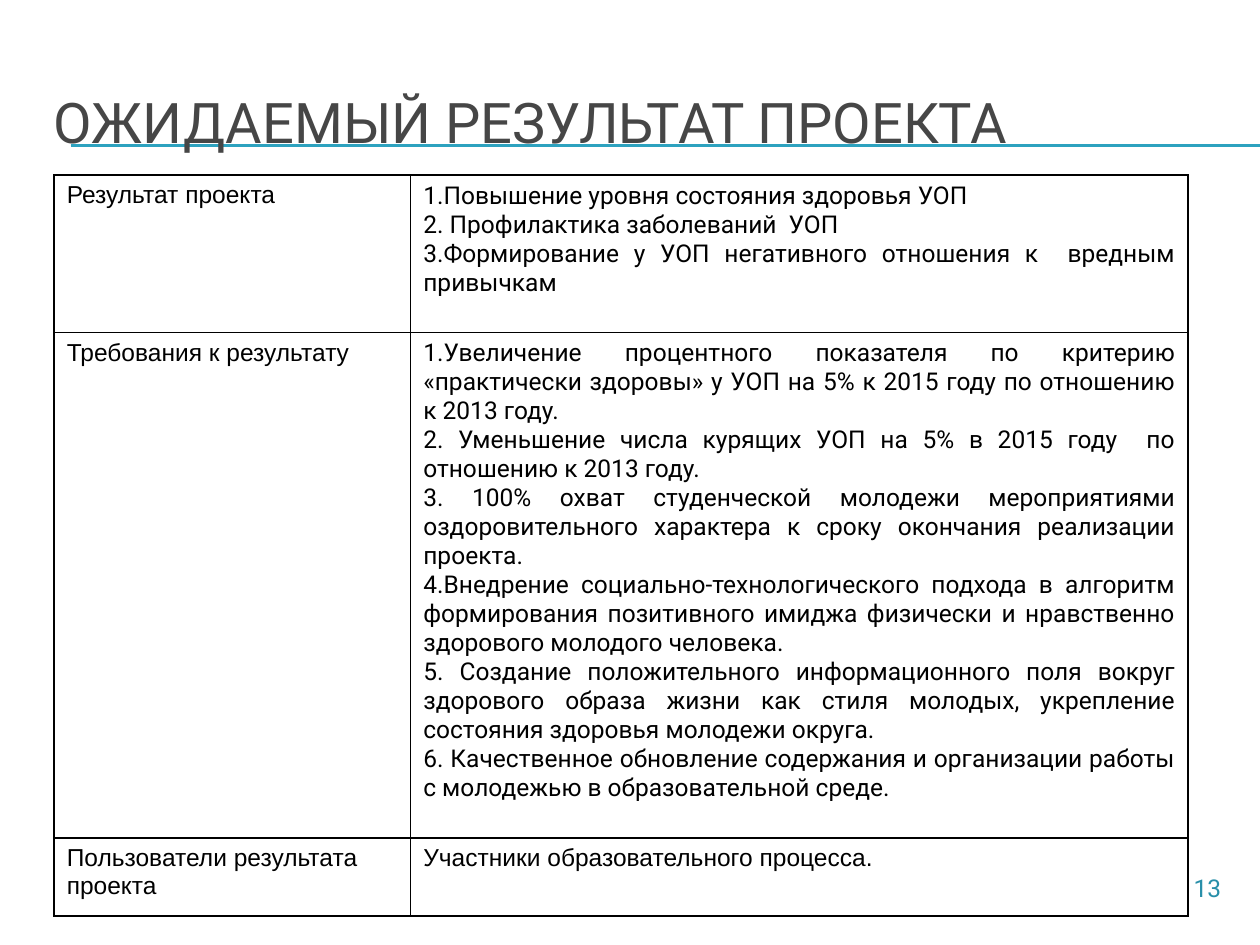
import lxml.etree
import pptx
import pptx.dml.color
import pptx.enum.shapes
import pptx.enum.text
import pptx.oxml
import pptx.oxml.ns
import pptx.util

Inches = pptx.util.Inches
Align = pptx.enum.text.PP_ALIGN
Anchor = pptx.enum.text.MSO_ANCHOR
COLORS = {"rule": "2DA2BF", "title": "464646", "text": "000000", "number": "288FA9"}
COLUMN_WIDTHS = [2.83, 6.17]
ROWS = [
    (1.25, "Результат проекта", [
        "Повышение уровня состояния здоровья УОП",
        " Профилактика заболеваний  УОП",
        "Формирование у УОП негативного отношения к  вредным привычкам",
    ]),
    (4.01, "Требования к результату", [
        "Увеличение процентного показателя по критерию «практически здоровы» "
        "у УОП на 5% к 2015 году по отношению к 2013 году.",
        " Уменьшение числа курящих УОП на 5% в 2015 году  по отношению к 2013 году.",
        " 100% охват студенческой молодежи мероприятиями оздоровительного "
        "характера к сроку окончания реализации проекта.",
        "Внедрение социально-технологического подхода в алгоритм формирования "
        "позитивного имиджа физически и нравственно здорового молодого человека.",
        " Создание положительного информационного поля вокруг здорового образа "
        "жизни как стиля молодых, укрепление состояния здоровья молодежи округа.",
        " Качественное обновление содержания и организации работы с молодежью "
        "в образовательной среде.",
    ]),
    (0.62, "Пользователи результата проекта", "Участники образовательного процесса."),
]


def rgb(name):
    """Return the named colour."""
    return pptx.dml.color.RGBColor.from_string(COLORS[name])


def add_span(para, text, size, font, color):
    """Add one styled run to a paragraph."""
    span = para.add_run()
    span.text = text
    span.font.size = pptx.util.Pt(size)
    span.font.name = font
    span.font.color.rgb = rgb(color)


def add_text(page, box, text, size, color, align, anchor):
    """Add a one-line text box."""
    frame = page.shapes.add_textbox(*map(Inches, box)).text_frame
    frame.word_wrap = True
    frame.vertical_anchor = anchor
    para = frame.paragraphs[0]
    para.alignment = align
    add_span(para, text, size, "Roboto", color)


def add_rules(page, left, top, right):
    """Draw the double rule under the title."""
    for y in (top, top + 0.01):
        rule = page.shapes.add_connector(
            pptx.enum.shapes.MSO_CONNECTOR.STRAIGHT,
            Inches(left), Inches(y), Inches(right), Inches(y))
        rule.line.color.rgb = rgb("rule")
        rule.line.width = pptx.util.Pt(0.75)
        properties = rule._element.spPr
        lxml.etree.SubElement(properties, pptx.oxml.ns.qn("a:effectLst"))


def style_cell(cell):
    """Give a cell its borders, margins and empty fill."""
    cell.margin_left = cell.margin_right = Inches(0.1)
    cell.margin_top = cell.margin_bottom = Inches(0.05)
    properties = cell._tc.get_or_add_tcPr()
    for side in ("lnL", "lnR", "lnT", "lnB"):
        properties.append(pptx.oxml.parse_xml(
            f'<a:{side} {pptx.oxml.ns.nsdecls("a")} w="{pptx.util.Pt(1)}"><a:solidFill>'
            f'<a:srgbClr val="{COLORS["text"]}"/></a:solidFill></a:{side}>'))
    cell.fill.background()


def fill_numbered(cell, items):
    """Write items as a justified numbered list."""
    frame = cell.text_frame
    for index, item in enumerate(items):
        para = frame.add_paragraph() if index else frame.paragraphs[0]
        para.alignment = Align.JUSTIFY
        properties = para._p.get_or_add_pPr()
        properties.set("marL", "0")
        properties.set("indent", "0")
        numbering = lxml.etree.SubElement(properties, pptx.oxml.ns.qn("a:buAutoNum"))
        numbering.set("type", "arabicPeriod")
        add_span(para, item, 14, "Roboto", "text")


def add_results(page, left, top):
    """Build the table of project results."""
    heights = [height for height, label, content in ROWS]
    table = page.shapes.add_table(
        len(ROWS), len(COLUMN_WIDTHS), Inches(left), Inches(top),
        Inches(sum(COLUMN_WIDTHS)), Inches(sum(heights))).table
    table.first_row = table.horz_banding = False
    for column, width in zip(table.columns, COLUMN_WIDTHS):
        column.width = Inches(width)
    for row, (height, label, content) in zip(table.rows, ROWS):
        row.height = Inches(height)
        for cell, value in zip(row.cells, (label, content)):
            style_cell(cell)
            if isinstance(value, list):
                fill_numbered(cell, value)
            else:
                add_span(cell.text_frame.paragraphs[0], value, 14, "Arial", "text")


def main():
    """Build and save the slide."""
    deck = pptx.Presentation()
    deck.slide_width, deck.slide_height = Inches(10), Inches(7.5)
    page = deck.slides.add_slide(deck.slide_layouts[6])
    add_rules(page, 0.56, 1.15, 10)
    add_text(page, (0.33, 0.5, 9.5, 0.92), "ОЖИДАЕМЫЙ РЕЗУЛЬТАТ ПРОЕКТА",
             32, "title", Align.LEFT, Anchor.MIDDLE)
    add_results(page, 0.43, 1.39)
    add_text(page, (0.47, 6.88, 9.32, 0.27), "13", 14, "number", Align.RIGHT, Anchor.TOP)
    deck.save("out.pptx")


if __name__ == "__main__":
    main()
